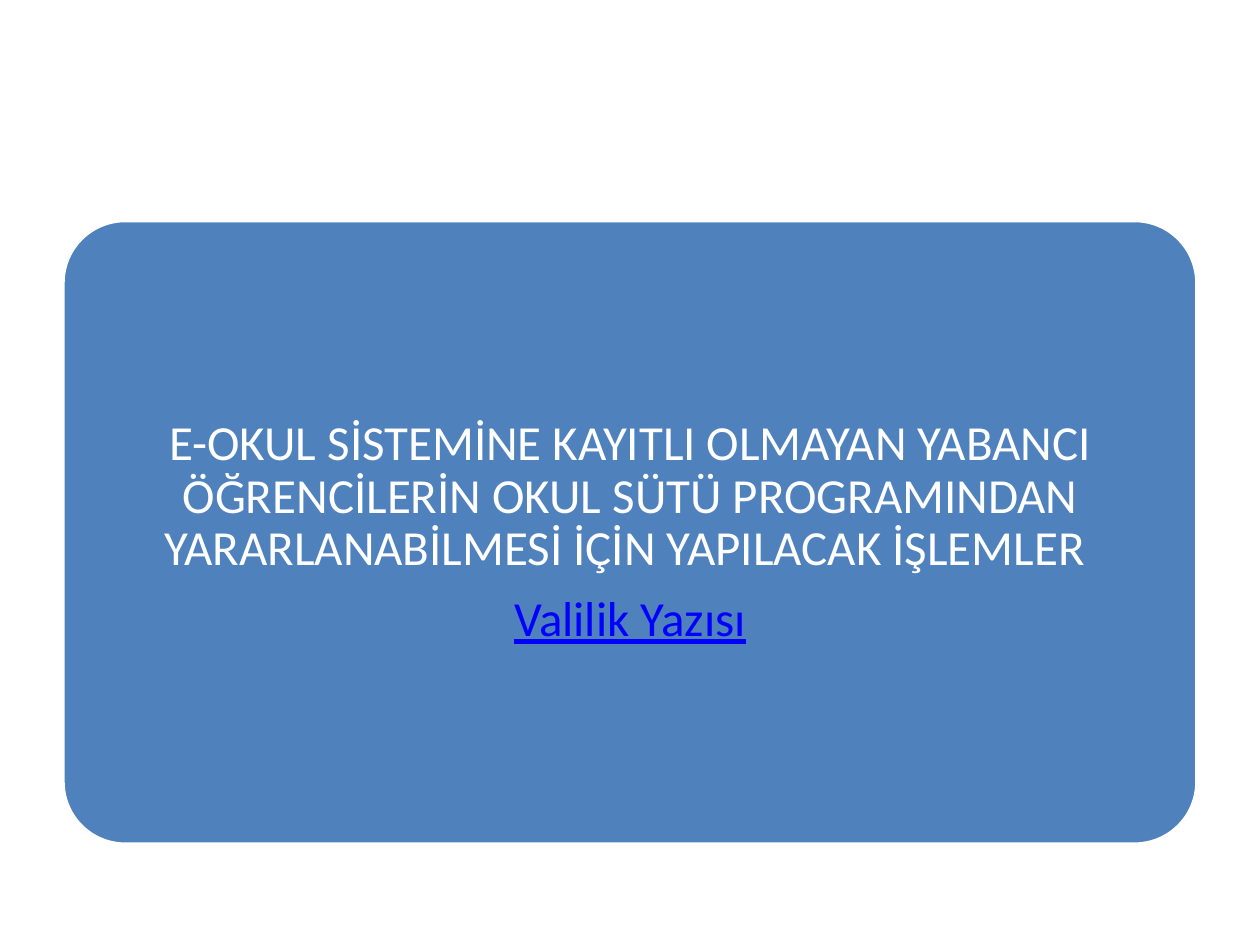
from pptx import Presentation
from pptx.dml.color import RGBColor
from pptx.enum.shapes import MSO_SHAPE
from pptx.enum.text import MSO_ANCHOR, PP_ALIGN
from pptx.text.text import TextFrame
from pptx.util import Inches, Pt

ROUNDED = MSO_SHAPE.ROUNDED_RECTANGLE
MIDDLE = MSO_ANCHOR.MIDDLE
CENTER = PP_ALIGN.CENTER

COLORS = {"panel": "4F81BD", "white": "FFFFFF", "link": "0000FF"}
FONT = "Calibri"


def rgb(name: str) -> RGBColor:
    return RGBColor.from_string(COLORS[name])


def write_paragraph(frame: TextFrame, text: str, *, color: str, size: float = 28,
                    underline: bool = False, first: bool = False) -> None:
    paragraph = frame.paragraphs[0] if first else frame.add_paragraph()
    paragraph.alignment = CENTER
    paragraph.line_spacing = 0.9
    paragraph.space_after = Pt(10)
    run = paragraph.add_run()
    run.text = text
    run.font.name = FONT
    run.font.size = Pt(size)
    run.font.underline = underline
    run.font.color.rgb = rgb(color)


def main() -> None:
    presentation = Presentation()
    presentation.slide_width = Inches(10)
    presentation.slide_height = Inches(7.5)
    slide = presentation.slides.add_slide(presentation.slide_layouts[6])

    # Rounded panel
    panel = slide.shapes.add_shape(ROUNDED, Inches(0.5), Inches(1.75),
                                   Inches(9), Inches(4.95))
    panel.adjustments[0] = 0.1
    panel.shadow.inherit = False
    panel.fill.solid()
    panel.fill.fore_color.rgb = rgb("panel")
    panel.line.color.rgb = rgb("white")
    panel.line.width = Pt(2)

    # Heading and the reference to the letter
    frame = panel.text_frame
    frame.word_wrap = True
    frame.vertical_anchor = MIDDLE
    frame.margin_left = frame.margin_right = Inches(0.12)
    frame.margin_top = frame.margin_bottom = Inches(0.12)
    write_paragraph(frame, "E-OKUL SİSTEMİNE KAYITLI OLMAYAN YABANCI ÖĞRENCİLERİN "
                    "OKUL SÜTÜ PROGRAMINDAN YARARLANABİLMESİ İÇİN YAPILACAK İŞLEMLER ",
                    color="white", first=True)
    write_paragraph(frame, "Valilik Yazısı", color="link", underline=True)

    presentation.save("out.pptx")


if __name__ == "__main__":
    main()
